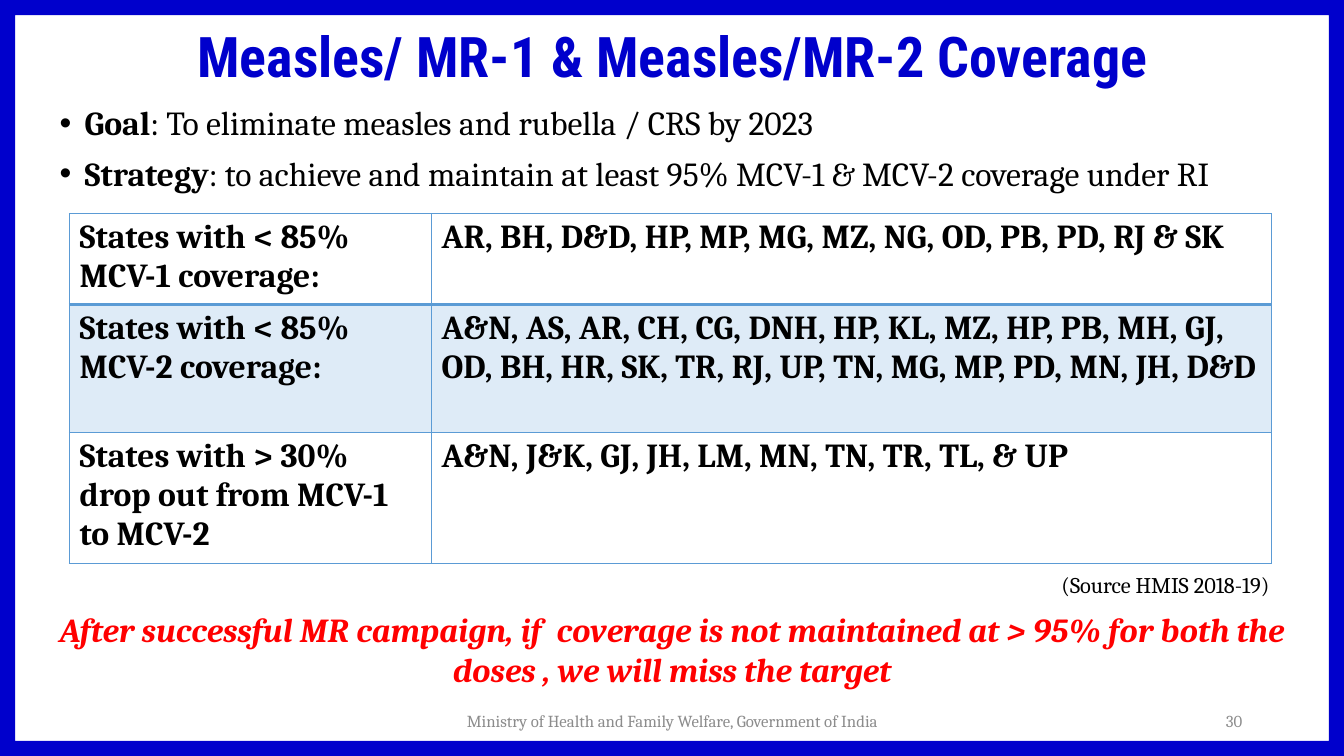
import pptx
import pptx.util
import pptx.dml.color
import pptx.enum.shapes
import pptx.enum.text
import pptx.oxml
import pptx.oxml.ns

Inches = pptx.util.Inches
Pt = pptx.util.Pt
RGBColor = pptx.dml.color.RGBColor
ALIGN = pptx.enum.text.PP_ALIGN
ANCHOR = pptx.enum.text.MSO_ANCHOR
FIT = pptx.enum.text.MSO_AUTO_SIZE

BLUE = RGBColor(0x00, 0x00, 0xCC)
SKY = RGBColor(0x5B, 0x9B, 0xD5)
PALE = RGBColor(0xDE, 0xEB, 0xF7)
WHITE = RGBColor(0xFF, 0xFF, 0xFF)
BLACK = RGBColor(0x00, 0x00, 0x00)
RED = RGBColor(0xFF, 0x00, 0x00)
GREY = RGBColor(0x8C, 0x8C, 0x8C)

WIDE, HIGH = 13.33, 7.5
AIMS = [
    ("Goal", ": To eliminate measles and rubella / CRS by 2023"),
    ("Strategy", ": to achieve and maintain at least 95% MCV-1 & MCV-2 "
                 "coverage under RI"),
]
STATES = [
    ("States with < 85% MCV-1 coverage:",
     "AR, BH, D&D, HP, MP, MG, MZ, NG, OD, PB, PD, RJ & SK"),
    ("States with < 85% MCV-2 coverage:",
     "A&N, AS, AR, CH, CG, DNH, HP, KL, MZ, HP, PB, MH, GJ, OD, BH, HR, SK, "
     "TR, RJ, UP, TN, MG, MP, PD, MN, JH, D&D"),
    ("States with > 30% drop out from MCV-1 to MCV-2",
     "A&N, J&K, GJ, JH, LM, MN, TN, TR, TL, & UP"),
]
COLS = [3.59, 8.33]
ROWS = [0.9, 1.27, 1.3]


def style(run, size, color, bold=False, italic=False, face="Cambria"):
    font = run.font
    font.name, font.size = face, Pt(size)
    font.bold, font.italic = bold, italic
    font.color.rgb = color


def place(shape, box):
    shape.left, shape.top, shape.width, shape.height = map(Inches, box)


def add_frame(slide, box):
    frame = slide.shapes.add_shape(
        pptx.enum.shapes.MSO_SHAPE.FRAME, *map(Inches, box))
    frame.adjustments[0] = 0.02
    frame.shadow.inherit = False
    frame.fill.solid()
    frame.fill.fore_color.rgb = BLUE
    frame.line.fill.background()


def fill_title(slide, box):
    title = slide.shapes.title
    place(title, box)
    text = title.text_frame
    text.text = "Measles/ MR-1 & Measles/MR-2 Coverage"
    text.auto_size = FIT.NONE
    text.vertical_anchor = ANCHOR.MIDDLE
    para = text.paragraphs[0]
    para.alignment, para.line_spacing = ALIGN.CENTER, 0.9
    style(para.runs[0], 40, BLUE, bold=True, face="Roboto Condensed")


def add_bullet(para):
    props = para._p.get_or_add_pPr()
    props.set("marL", str(Inches(0.25)))
    props.set("indent", str(Inches(-0.25)))
    space = pptx.oxml.ns.nsdecls("a")
    for tag in ('buFont {} typeface="Arial"', 'buChar {} char="•"'):
        props.append(pptx.oxml.parse_xml(f"<a:{tag.format(space)}/>"))


def fill_aims(slide, box):
    body = slide.placeholders[1]
    place(body, box)
    text = body.text_frame
    text.auto_size = FIT.NONE
    for index, (head, rest) in enumerate(AIMS):
        para = text.add_paragraph() if index else text.paragraphs[0]
        add_bullet(para)
        para.alignment, para.line_spacing = ALIGN.JUSTIFY, 0.9
        para.space_before = Pt(10 if index else 0)
        for words, bold in ((head, True), (rest, False)):
            run = para.add_run()
            run.text = words
            style(run, 24, BLACK, bold=bold)


def add_edges(cell, widths):
    """Draw the left, right, top and bottom borders in points."""
    props = cell._tc.get_or_add_tcPr()
    for side, width in zip("LRTB", widths):
        props.append(pptx.oxml.parse_xml(
            f'<a:ln{side} {pptx.oxml.ns.nsdecls("a")} w="{Pt(width)}">'
            f'<a:solidFill><a:srgbClr val="{SKY}"/></a:solidFill>'
            f'</a:ln{side}>'))


def add_states(slide, left, top):
    table = slide.shapes.add_table(
        len(ROWS), len(COLS), Inches(left), Inches(top),
        Inches(sum(COLS)), Inches(sum(ROWS))).table
    table.first_row = table.horz_banding = False
    for col, width in zip(table.columns, COLS):
        col.width = Inches(width)
    for index, (row, height) in enumerate(zip(table.rows, ROWS)):
        row.height = Inches(height)
        for cell, words in zip(row.cells, STATES[index]):
            cell.text_frame.text = words
            style(cell.text_frame.paragraphs[0].runs[0], 24, BLACK, bold=True)
            add_edges(cell, (1, 1, 2 if index == 1 else 1,
                             2 if index == 0 else 1))
            cell.fill.solid()
            cell.fill.fore_color.rgb = PALE if index == 1 else WHITE


def add_note(slide, box, words, align, size, color, anchor=ANCHOR.TOP,
             strong=False):
    text = slide.shapes.add_textbox(*map(Inches, box)).text_frame
    text.word_wrap = True
    text.vertical_anchor = anchor
    text.text = words
    para = text.paragraphs[0]
    para.alignment = align
    style(para.runs[0], size, color, bold=strong, italic=strong)


def add_footer(slide, top, high):
    add_note(slide, (4.42, top, 4.5, high),
             "Ministry of Health and Family Welfare, Government of India",
             ALIGN.CENTER, 12, GREY, ANCHOR.MIDDLE)
    add_note(slide, (9.42, top, 3, high), "30",
             ALIGN.RIGHT, 12, GREY, ANCHOR.MIDDLE)


def build_slide(deck):
    slide = deck.slides.add_slide(deck.slide_layouts[1])
    add_frame(slide, (0, 0, WIDE, HIGH))
    fill_title(slide, (0.92, 0.15, 11.5, 0.88))
    fill_aims(slide, (0.49, 1.01, 12.36, 1.16))
    add_footer(slide, 6.95, 0.4)
    add_note(slide, (0, 5.99, WIDE, 0.91),
             "After successful MR campaign, if  coverage is not maintained "
             "at > 95% for both the doses , we will miss the target",
             ALIGN.CENTER, 24, RED, strong=True)
    add_states(slide, 0.69, 2.12)
    add_note(slide, (10.43, 5.62, 2.6, 0.37), "(Source HMIS 2018-19)",
             ALIGN.JUSTIFY, 16, BLACK)


def main():
    deck = pptx.Presentation()
    deck.slide_width, deck.slide_height = Inches(WIDE), Inches(HIGH)
    build_slide(deck)
    deck.save("out.pptx")


if __name__ == "__main__":
    main()
